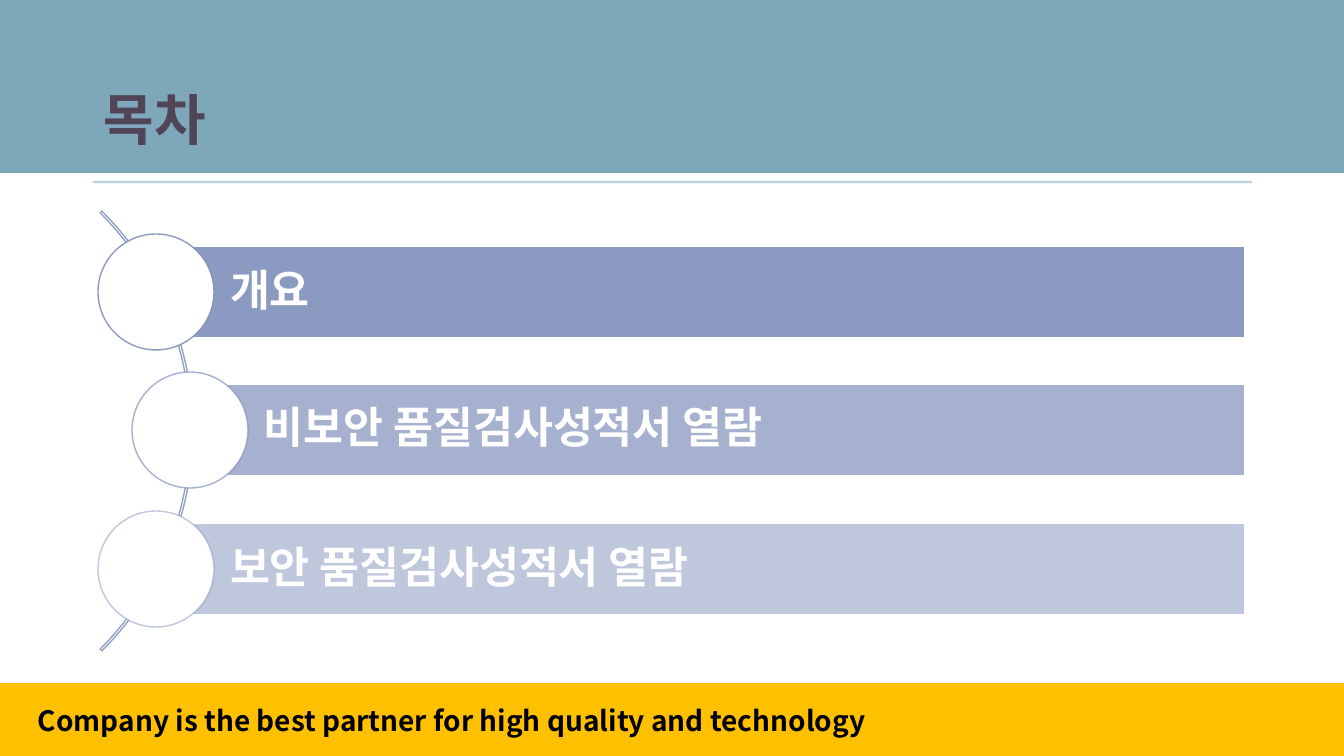
"""Build the table-of-contents slide with three agenda bars along an arc."""
from lxml import etree
from pptx import Presentation
from pptx.dml.color import RGBColor
from pptx.enum.shapes import MSO_CONNECTOR, MSO_SHAPE
from pptx.enum.text import MSO_ANCHOR, PP_ALIGN
from pptx.oxml.ns import qn
from pptx.util import Pt

RECT, OVAL, ARC = MSO_SHAPE.RECTANGLE, MSO_SHAPE.OVAL, MSO_SHAPE.BLOCK_ARC
STRAIGHT = MSO_CONNECTOR.STRAIGHT
MIDDLE, LEFT = MSO_ANCHOR.MIDDLE, PP_ALIGN.LEFT
TEAL = RGBColor(0x7E, 0xA8, 0xB9)
AMBER = RGBColor(0xFF, 0xC0, 0x00)
PERIWINKLE = RGBColor(0x7F, 0x90, 0xBA)
ARC_BLUE = RGBColor(0x93, 0xA0, 0xC2)
PLUM = RGBColor(0x41, 0x24, 0x36)
WHITE = RGBColor(0xFF, 0xFF, 0xFF)
BLACK = RGBColor(0x00, 0x00, 0x00)
FONT = "Noto Sans CJK KR"
PX = 914400 / 100.8
WIDTH, HEIGHT = 1344, 756


def paint(fill, color, opacity=100):
    fill.solid()
    fill.fore_color.rgb = color
    if opacity < 100:
        srgb = next(fill._xPr.iter(qn("a:srgbClr")))
        etree.SubElement(srgb, qn("a:alpha"), val=str(opacity * 1000))


def write(shape, text, size, color, opacity=100, wrap=True):
    frame = shape.text_frame
    frame.word_wrap = wrap
    frame.vertical_anchor = MIDDLE
    paragraph = frame.paragraphs[0]
    paragraph.alignment = LEFT
    run = paragraph.add_run()
    run.text = text
    for name, value in {"name": FONT, "size": Pt(size), "bold": True}.items():
        setattr(run.font, name, value)
    paint(run.font.fill, color, opacity)
    etree.SubElement(run.font._element, qn("a:ea"), typeface=FONT)
    return paragraph


prs = Presentation()
prs.slide_width, prs.slide_height = round(WIDTH * PX), round(HEIGHT * PX)
shapes = prs.slides.add_slide(prs.slide_layouts[6]).shapes

for top, height, color in [(0, 173, TEAL), (683, 73, AMBER)]:
    band = shapes.add_shape(RECT, 0, round(top * PX), round(WIDTH * PX), round(height * PX))
    band.shadow.inherit = False
    paint(band.fill, color)
    band.line.fill.background()

slogan = shapes.add_textbox(*(round(v * PX) for v in (28, 698, 864, 44)))
write(slogan, "Company is the best partner for high quality and technology", 20, BLACK, wrap=False)

rule = shapes.add_connector(STRAIGHT, *(round(v * PX) for v in (93, 182, 1252, 182)))
etree.SubElement(rule._element.spPr, qn("a:effectLst"))
rule.line.width = Pt(1.5)
paint(rule.line.fill, TEAL, 50)

title = shapes.add_textbox(*(round(v * PX) for v in (93, 73, 1159, 91)))
write(title, "목차", 40, PLUM, 75)

arc = shapes.add_shape(ARC, *(round(v * PX) for v in (-429, 120, 622, 622)))
arc.shadow.inherit = False
for index, value in enumerate((189, 27, 0.004)):
    arc.adjustments[index] = value
arc.fill.background()
arc.line.width = Pt(1)
paint(arc.line.fill, ARC_BLUE)

BAR_RIGHT, BAR_HEIGHT, CIRCLE = 1245, 92, 116
AGENDA = [
    ("개요", 156, 292, 90),
    ("비보안 품질검사성적서 열람", 190, 430, 70),
    ("보안 품질검사성적서 열람", 156, 569, 50),
]
for topic, center_x, center_y, opacity in AGENDA:
    bar_box = (center_x, center_y - BAR_HEIGHT // 2, BAR_RIGHT - center_x, BAR_HEIGHT)
    circle_box = (center_x - CIRCLE // 2, center_y - CIRCLE // 2, CIRCLE, CIRCLE)
    bar = shapes.add_shape(RECT, *(round(v * PX) for v in bar_box))
    circle = shapes.add_shape(OVAL, *(round(v * PX) for v in circle_box))
    for part in (bar, circle):
        part.shadow.inherit = False
        part.line.width = Pt(1)
    paint(bar.fill, PERIWINKLE, opacity)
    paint(bar.line.fill, WHITE)
    paint(circle.fill, WHITE)
    paint(circle.line.fill, PERIWINKLE, opacity)
    bar.text_frame.margin_left = round(74 * PX)
    write(bar, topic, 31, WHITE).line_spacing = 0.9

prs.save("out.pptx")
